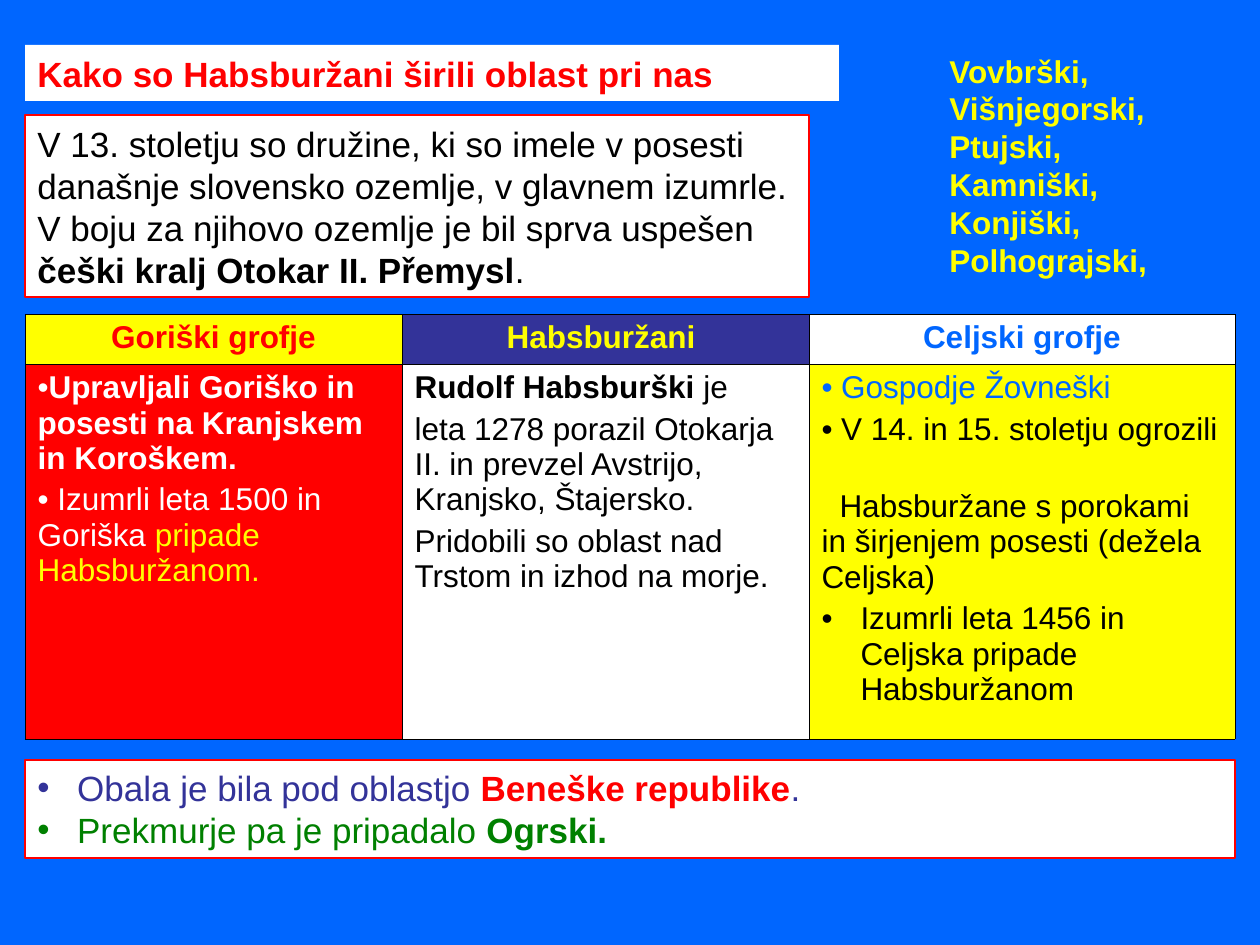
import pptx
import pptx.util
import pptx.dml.color
import pptx.enum.shapes
import pptx.enum.text
import pptx.oxml.ns
import lxml.etree

SCALE = 914400 // 126
FONT = "Arial"
RED, YELLOW, BLUE, INDIGO = "FF0000", "FFFF00", "0066FF", "333399"
WHITE, BLACK, GREEN = "FFFFFF", "000000", "008000"
LEFT = pptx.enum.text.PP_ALIGN.LEFT
CENTER = pptx.enum.text.PP_ALIGN.CENTER
TOP = pptx.enum.text.MSO_ANCHOR.TOP
MIDDLE = pptx.enum.text.MSO_ANCHOR.MIDDLE


def px(length):
    return pptx.util.Emu(length * SCALE)


def color(value):
    return pptx.dml.color.RGBColor.from_string(value)


def paint(fill, value):
    fill.solid()
    fill.fore_color.rgb = color(value)


def add_child(parent, tag, **attributes):
    return lxml.etree.SubElement(parent, pptx.oxml.ns.qn(tag), attributes)


def write(frame, paragraphs, size, alignment=LEFT, gap=0):
    for index, item in enumerate(paragraphs):
        paragraph = frame.paragraphs[0] if index == 0 else frame.add_paragraph()
        paragraph.alignment = alignment
        if index:
            paragraph.space_before = pptx.util.Pt(item.get("gap", gap))
        properties = paragraph._p.get_or_add_pPr()
        properties.set("marL", str(px(item.get("margin", 0))))
        properties.set("indent", str(px(item.get("indent", 0))))
        if item.get("bullet"):
            add_child(properties, "a:buFont", typeface=FONT)
            add_child(properties, "a:buChar", char="•")
        else:
            add_child(properties, "a:buNone")
        for text, value, bold in item["runs"]:
            run = paragraph.add_run()
            run.text = text
            run.font.name = FONT
            run.font.size = pptx.util.Pt(size)
            run.font.bold = bold
            run.font.color.rgb = color(value)


def add_panel(slide, box, paragraphs, anchor=MIDDLE, outline=None):
    shape = slide.shapes.add_shape(
        pptx.enum.shapes.MSO_SHAPE.RECTANGLE, *map(px, box))
    shape.shadow.inherit = False
    paint(shape.fill, WHITE)
    if outline:
        shape.line.color.rgb = color(outline)
        shape.line.width = pptx.util.Pt(0.75)
    else:
        shape.line.fill.background()
    shape.text_frame.word_wrap = True
    shape.text_frame.vertical_anchor = anchor
    write(shape.text_frame, paragraphs, 20)


def add_family_names(slide, box, names):
    shape = slide.shapes.add_textbox(*map(px, box))
    shape.text_frame.word_wrap = False
    shape.text_frame.vertical_anchor = MIDDLE
    write(shape.text_frame, [{"runs": [(name, YELLOW, True)]} for name in names], 18)


def add_borders(cell):
    properties = cell._tc.get_or_add_tcPr()
    for position, side in enumerate(("a:lnL", "a:lnR", "a:lnT", "a:lnB")):
        line = lxml.etree.Element(pptx.oxml.ns.qn(side), {"w": "3175"})
        solid = add_child(line, "a:solidFill")
        add_child(solid, "a:srgbClr", val=BLACK)
        properties.insert(position, line)


def add_dynasty_table(slide, box, widths, heights, columns):
    table = slide.shapes.add_table(
        len(heights), len(widths), *map(px, box)).table
    for row, height in zip(table.rows, heights):
        row.height = px(height)
    for index, (width, column) in enumerate(zip(widths, columns)):
        table.columns[index].width = px(width)
        title, title_color, title_fill, body, body_fill = column
        heading = [{"runs": [(title, title_color, True)]}]
        parts = ((heading, title_fill, CENTER), (body, body_fill, LEFT))
        for row, (paragraphs, fill, alignment) in enumerate(parts):
            cell = table.cell(row, index)
            paint(cell.fill, fill)
            add_borders(cell)
            write(cell.text_frame, paragraphs, 18, alignment, 3.6)


def build_slide(presentation):
    slide = presentation.slides.add_slide(presentation.slide_layouts[6])
    paint(slide.background.fill, BLUE)

    add_panel(slide, (25, 115, 784, 182), [{"runs": [
        ("V 13. stoletju so družine, ki so imele v posesti današnje slovensko "
         "ozemlje, v glavnem izumrle. V boju za njihovo ozemlje je bil sprva "
         "uspešen ", BLACK, False),
        ("češki kralj Otokar II. Přemysl", BLACK, True),
        (".", BLACK, False)]}], outline=RED)

    gorizia = [
        {"bullet": True, "runs": [
            ("Upravljali Goriško in posesti na Kranjskem in Koroškem.", WHITE, True)]},
        {"bullet": True, "runs": [
            (" Izumrli leta 1500 in Goriška ", WHITE, False),
            ("pripade Habsburžanom.", YELLOW, False)]}]
    habsburg = [
        {"runs": [("Rudolf Habsburški ", BLACK, True), ("je", BLACK, False)]},
        {"runs": [("leta 1278 porazil Otokarja II. in prevzel Avstrijo, "
                   "Kranjsko, Štajersko.", BLACK, False)]},
        {"runs": [("Pridobili so oblast nad Trstom in izhod na morje.", BLACK, False)]}]
    celje = [
        {"bullet": True, "runs": [(" Gospodje Žovneški", BLUE, False)]},
        {"bullet": True, "runs": [(" V 14. in 15. stoletju ogrozili", BLACK, False)]},
        {"gap": 24, "indent": 18, "runs": [
            ("Habsburžane s porokami in širjenjem posesti (dežela Celjska)",
             BLACK, False)]},
        {"bullet": True, "margin": 39, "indent": -39, "runs": [
            ("Izumrli leta 1456 in Celjska pripade Habsburžanom", BLACK, False)]}]
    add_dynasty_table(slide, (25, 314, 1210, 425), (377, 407, 426), (50, 375), [
        ("Goriški grofje", RED, YELLOW, gorizia, RED),
        ("Habsburžani ", YELLOW, INDIGO, habsburg, WHITE),
        ("Celjski grofje", BLUE, WHITE, celje, YELLOW)])

    add_panel(slide, (25, 45, 814, 56), [{"runs": [
        ("Kako so Habsburžani širili oblast pri nas", RED, True)]}])

    add_panel(slide, (25, 760, 1210, 98), [
        {"bullet": True, "margin": 30, "indent": -30, "runs": [
            (" Obala je bila pod oblastjo ", INDIGO, False),
            ("Beneške republike", RED, True),
            (".", INDIGO, False)]},
        {"bullet": True, "margin": 30, "indent": -30, "runs": [
            (" Prekmurje pa je pripadalo ", GREEN, False),
            ("Ogrski.", GREEN, True)]}], anchor=TOP, outline=RED)

    add_family_names(slide, (937, 45, 223, 240), [
        "Vovbrški,", "Višnjegorski,", "Ptujski,",
        "Kamniški,", "Konjiški,", "Polhograjski,"])


def main():
    presentation = pptx.Presentation()
    presentation.slide_width = px(1260)
    presentation.slide_height = px(945)
    build_slide(presentation)
    presentation.save("out.pptx")


if __name__ == "__main__":
    main()
